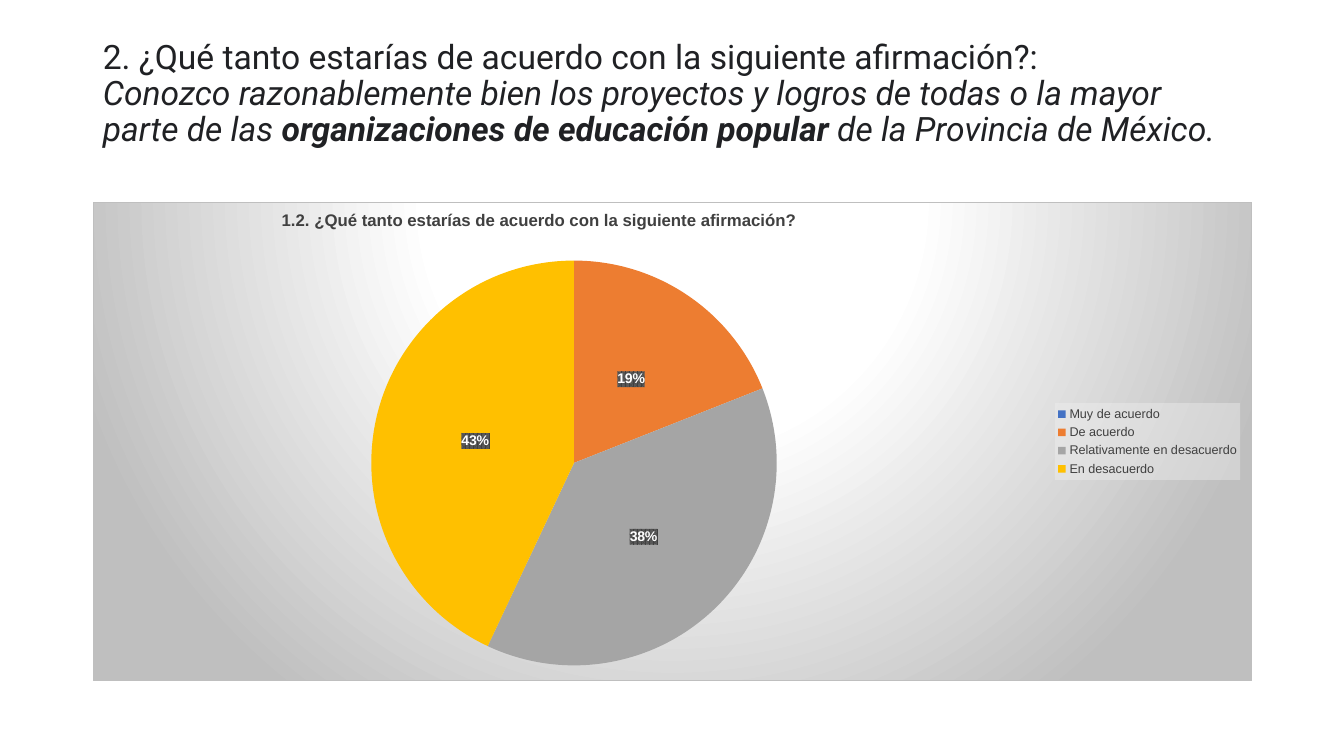
from copy import deepcopy
from dataclasses import dataclass

from lxml import etree
from pptx import Presentation
from pptx.chart.data import CategoryChartData
from pptx.dml.color import RGBColor
from pptx.enum.chart import XL_CHART_TYPE, XL_LABEL_POSITION, XL_LEGEND_POSITION
from pptx.enum.text import MSO_ANCHOR, PP_ALIGN
from pptx.oxml import parse_xml
from pptx.oxml.ns import qn
from pptx.util import Inches, Pt

PIE = XL_CHART_TYPE.PIE
LABEL_CENTER = XL_LABEL_POSITION.CENTER
LEGEND_RIGHT = XL_LEGEND_POSITION.RIGHT
ANCHOR_TOP = MSO_ANCHOR.TOP
ALIGN_LEFT = PP_ALIGN.LEFT
TITLE_ONLY_LAYOUT = 5

NAMESPACES = (
    'xmlns:c="http://schemas.openxmlformats.org/drawingml/2006/chart" '
    'xmlns:a="http://schemas.openxmlformats.org/drawingml/2006/main"'
)


@dataclass(frozen=True)
class Theme:
    title_font: str = "Roboto"
    chart_font: str = "Arial"
    title_size: int = 24
    chart_title_size: int = 12
    label_size: int = 10
    legend_size: int = 9
    title_color: str = "202124"
    chart_text: str = "404040"
    label_pattern: str = "595959"
    white: str = "FFFFFF"
    border: str = "BFBFBF"
    legend_fill: str = "F2F2F2"
    slices: tuple = ("4472C4", "ED7D31", "A5A5A5", "FFC000")


class SlideBuilder:
    def __init__(self, slide, theme):
        self.slide = slide
        self.theme = theme

    def style_font(self, font, name, size, color, bold=False, italic=False):
        font.name = name
        font.size = Pt(size)
        font.color.rgb = RGBColor.from_string(color)
        font.bold = bold
        font.italic = italic

    def shape_properties(self, content):
        return parse_xml(f"<c:spPr {NAMESPACES}>{content}</c:spPr>")

    def solid_fill(self, color, alpha=100):
        return (f'<a:solidFill><a:srgbClr val="{color}">'
                f'<a:alpha val="{alpha * 1000}"/></a:srgbClr></a:solidFill>')

    def place(self, element, inner=False, **fractions):
        """Give a chart part a fixed place, in fractions of the chart."""
        for layout in element.findall(qn("c:layout")):
            element.remove(layout)
        layout = parse_xml(f"<c:layout {NAMESPACES}><c:manualLayout/></c:layout>")
        manual = layout[0]
        settings = {"layoutTarget": "inner"} if inner else {}
        settings.update(xMode="edge", yMode="edge", **fractions)
        for tag, value in settings.items():
            etree.SubElement(manual, qn(f"c:{tag}")).set("val", str(value))
        overlay = element.find(qn("c:overlay"))
        if overlay is None:
            element.insert(0, layout)
        else:
            overlay.addprevious(layout)

    def title(self, lines, left, top, width, height):
        """Lines hold (text, bold, italic) runs."""
        title = self.slide.shapes.title
        title.left, title.top = Inches(left), Inches(top)
        title.width, title.height = Inches(width), Inches(height)
        frame = title.text_frame
        frame.word_wrap = True
        frame.vertical_anchor = ANCHOR_TOP
        frame.margin_top = 0
        paragraph = frame.paragraphs[0]
        paragraph.alignment = ALIGN_LEFT
        paragraph.line_spacing = 0.9
        for number, line in enumerate(lines):
            if number:
                # The break takes the type size of the run before it
                paragraph.add_line_break()
                paragraph._p[-1].append(deepcopy(run._r.rPr))
            for text, bold, italic in line:
                run = paragraph.add_run()
                run.text = text
                self.style_font(run.font, self.theme.title_font, self.theme.title_size,
                                self.theme.title_color, bold, italic)

    def pie_chart(self, heading, answers, left, top, width, height):
        theme = self.theme
        data = CategoryChartData()
        data.categories = list(answers)
        data.add_series("Series 1", list(answers.values()))
        chart = self.slide.shapes.add_chart(
            PIE, Inches(left), Inches(top), Inches(width), Inches(height), data).chart
        self.style_font(chart.font, theme.chart_font, theme.label_size, theme.chart_text)
        self.chart_background(chart)

        # Heading
        chart.has_title = True
        paragraph = chart.chart_title.text_frame.paragraphs[0]
        run = paragraph.add_run()
        run.text = heading
        self.style_font(run.font, theme.chart_font, theme.chart_title_size,
                        theme.chart_text, bold=True)
        self.place(chart.chart_title._element, x=0.16, y=0.01)

        # Slices
        plot = chart.plots[0]
        plot.vary_by_categories = True
        series = plot.series[0]
        for index, color in enumerate(theme.slices):
            fill = series.points[index].format.fill
            fill.solid()
            fill.fore_color.rgb = RGBColor.from_string(color)
        self.place(chart._chartSpace.chart.plotArea, inner=True,
                   x=0.24, y=0.12, w=0.35, h=0.85)

        self.percent_labels(series)
        self.legend(chart)

    def chart_background(self, chart):
        theme = self.theme
        stops = "".join(
            f'<a:gs pos="{position * 1000}"><a:srgbClr val="{color}"/></a:gs>'
            for position, color in ((0, theme.white), (39, theme.white), (100, theme.border)))
        chart._chartSpace.chart.addnext(self.shape_properties(
            f'<a:gradFill><a:gsLst>{stops}</a:gsLst><a:path path="circle">'
            '<a:fillToRect l="50000" t="-80000" r="50000" b="180000"/></a:path></a:gradFill>'
            f'<a:ln w="{Pt(0.75)}">{self.solid_fill(theme.border)}</a:ln>'))

    def percent_labels(self, series):
        theme = self.theme
        labels = series.data_labels
        labels.show_percentage = True
        labels.show_value = False
        labels.number_format = "0%"
        labels.number_format_is_linked = False
        labels.position = LABEL_CENTER
        self.style_font(labels.font, theme.chart_font, theme.label_size, theme.white, bold=True)
        element = labels._element
        element.find(qn("c:txPr")).addprevious(self.shape_properties(
            f'<a:pattFill prst="pct75"><a:fgClr><a:srgbClr val="{theme.chart_text}"/></a:fgClr>'
            f'<a:bgClr><a:srgbClr val="{theme.label_pattern}"/></a:bgClr></a:pattFill>'))
        # Empty slices carry no label
        empty = [index for index, value in enumerate(series.values) if value == 0]
        for position, index in enumerate(empty):
            element.insert(position, parse_xml(
                f'<c:dLbl {NAMESPACES}><c:idx val="{index}"/><c:delete val="1"/></c:dLbl>'))

    def legend(self, chart):
        theme = self.theme
        chart.has_legend = True
        legend = chart.legend
        legend.position = LEGEND_RIGHT
        legend.include_in_layout = False
        self.style_font(legend.font, theme.chart_font, theme.legend_size, theme.chart_text)
        self.place(legend._element, x=0.83, y=0.42, w=0.16, h=0.16)
        legend._element.find(qn("c:txPr")).addprevious(
            self.shape_properties(self.solid_fill(theme.legend_fill, alpha=39)))


def main():
    presentation = Presentation()
    presentation.slide_width = Inches(13.33)
    presentation.slide_height = Inches(7.5)
    slide = presentation.slides.add_slide(presentation.slide_layouts[TITLE_ONLY_LAYOUT])
    builder = SlideBuilder(slide, Theme())

    # Question
    builder.title([
        [("2. ¿Qué tanto estarías de acuerdo con la siguiente afirmación?:", False, False)],
        [("Conozco razonablemente bien los proyectos y logros de todas o la mayor "
          "parte de las ", False, True),
         ("organizaciones de educación popular", True, True),
         (" de la Provincia de México.", False, True)],
    ], 0.92, 0.4, 11.5, 1.45)

    # Answers
    builder.pie_chart(
        "1.2. ¿Qué tanto estarías de acuerdo con la siguiente afirmación?",
        {"Muy de acuerdo": 0, "De acuerdo": 19,
         "Relativamente en desacuerdo": 38, "En desacuerdo": 43},
        0.92, 2, 11.5, 4.76)

    presentation.save("out.pptx")


if __name__ == "__main__":
    main()
